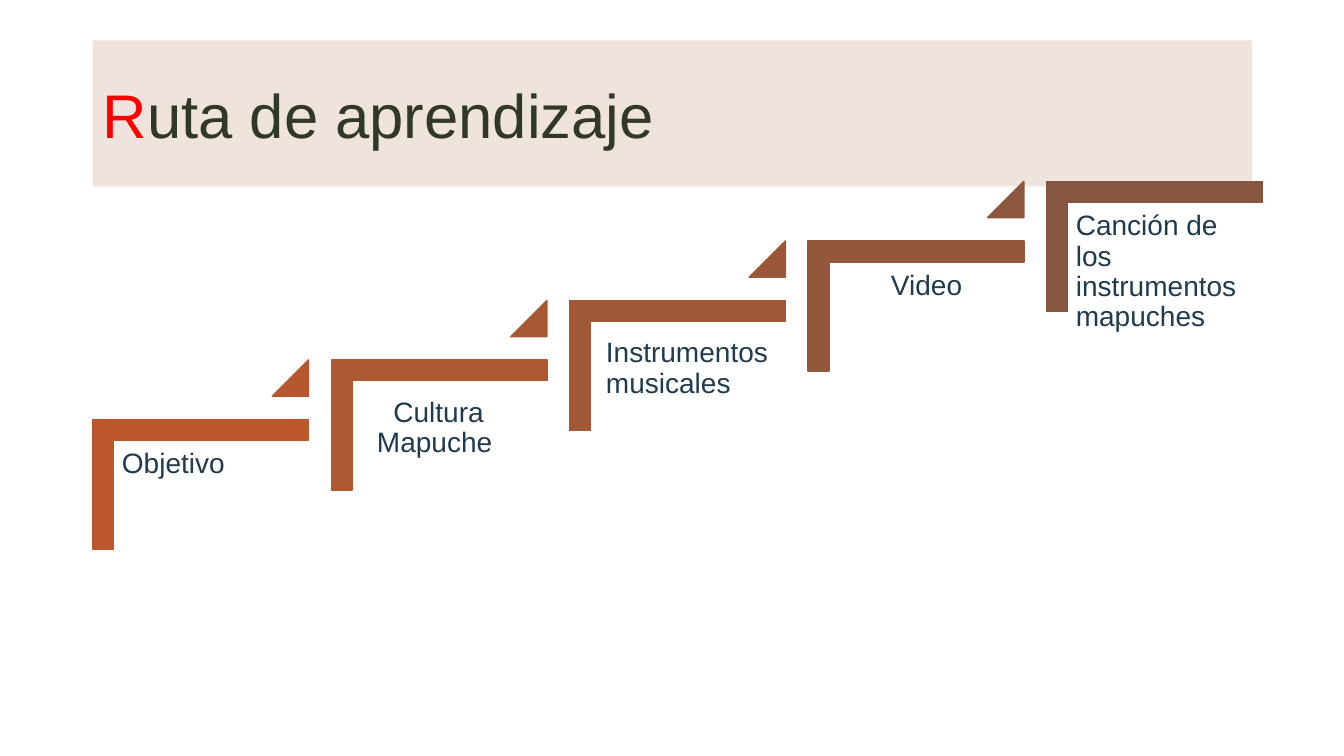
from lxml import etree
from pptx import Presentation
from pptx.dml.color import RGBColor
from pptx.enum.shapes import MSO_SHAPE as Shape
from pptx.enum.text import MSO_ANCHOR as Anchor, PP_ALIGN as Align
from pptx.oxml.ns import qn
from pptx.util import Inches, Pt

FONT = "Arial"
STEP_WIDTH, STEP_HEIGHT = 2.14, 1.29
STEP_RUN, STEP_RISE = 2.365, 0.59
TRIANGLE_SIZE = 0.36

# Label, alignment, label offset from the step, corner colour, triangle colour
STEPS = [
    ("Objetivo", Align.LEFT, (0.21, 0.22), "BD582C", "B6582F"),
    ("Cultura Mapuche ", Align.CENTER, (0.1, 0.3), "AE5832", "A75835"),
    ("Instrumentos musicales", Align.LEFT, (0.28, 0.3), "A05837", "9A573A"),
    ("Video", Align.CENTER, (0.21, 0.22), "93573C", "8C573E"),
    ("Canción de los instrumentos mapuches", Align.LEFT, (0.21, 0.22), "865640", None),
]


def color(value):
    return RGBColor.from_string(value)


def add_preset(slide, kind, left, top, width, height, fill, line=None):
    shape = slide.shapes.add_shape(
        kind, Inches(left), Inches(top), Inches(width), Inches(height))
    shape.shadow.inherit = False
    shape.fill.solid()
    shape.fill.fore_color.rgb = color(fill)
    if line:
        shape.line.color.rgb = color(line)
        shape.line.width = Pt(1)
    else:
        shape.line.fill.background()
    return shape


def write_text(shape, runs, size, align=Align.LEFT, anchor=Anchor.TOP,
               spacing=None, inset=None):
    """Fill a shape with one paragraph of (text, colour) runs."""
    frame = shape.text_frame
    frame.word_wrap = True
    frame.vertical_anchor = anchor
    if inset is not None:
        frame.margin_left = frame.margin_right = Inches(inset)
        frame.margin_top = frame.margin_bottom = Inches(inset)
    paragraph = frame.paragraphs[0]
    paragraph.alignment = align
    if spacing:
        paragraph.line_spacing = spacing
    for text, text_color in runs:
        run = paragraph.add_run()
        run.text = text
        run.font.name = FONT
        run.font.size = Pt(size)
        run.font.color.rgb = color(text_color)


def add_title(slide, left, top, width, height):
    band = add_preset(slide, Shape.RECTANGLE, left, top, width, height, "EBDCD5")
    # Band is 80 % opaque
    fill_color = band.element.spPr.find(qn("a:solidFill"))[0]
    etree.SubElement(fill_color, qn("a:alpha")).set("val", "80000")
    write_text(band, [("R", "FF0000"), ("uta de aprendizaje", "313829")], 44,
               anchor=Anchor.MIDDLE)


def add_step(slide, left, top, label, align, offset, corner_color, triangle_color):
    # Corner: drawn upright, then turned about its centre
    turn_shift = (STEP_WIDTH - STEP_HEIGHT) / 2
    corner = add_preset(slide, Shape.CORNER, left + turn_shift, top - turn_shift,
                        STEP_HEIGHT, STEP_WIDTH, corner_color, corner_color)
    corner.adjustments[0] = corner.adjustments[1] = 0.161
    corner.rotation = 90

    # Label
    box = slide.shapes.add_textbox(
        Inches(left + offset[0]), Inches(top + offset[1]), Inches(1.93), Inches(1.69))
    write_text(box, [(label, "203A4E")], 20, align, spacing=0.9, inset=0.08)

    # Triangle leading to the next step
    if triangle_color:
        triangle = add_preset(
            slide, Shape.ISOSCELES_TRIANGLE,
            left + STEP_WIDTH - TRIANGLE_SIZE, top - STEP_RISE,
            TRIANGLE_SIZE, TRIANGLE_SIZE, triangle_color, triangle_color)
        triangle.adjustments[0] = 1


def add_staircase(slide, left, top):
    for index, step in enumerate(STEPS):
        add_step(slide, left + index * STEP_RUN, top - index * STEP_RISE, *step)


def main():
    presentation = Presentation()
    presentation.slide_width = Inches(13.33)
    presentation.slide_height = Inches(7.5)
    slide = presentation.slides.add_slide(presentation.slide_layouts[6])
    add_title(slide, 0.92, 0.4, 11.5, 1.45)
    add_staircase(slide, 0.92, 4.16)
    presentation.save("out.pptx")


if __name__ == "__main__":
    main()
